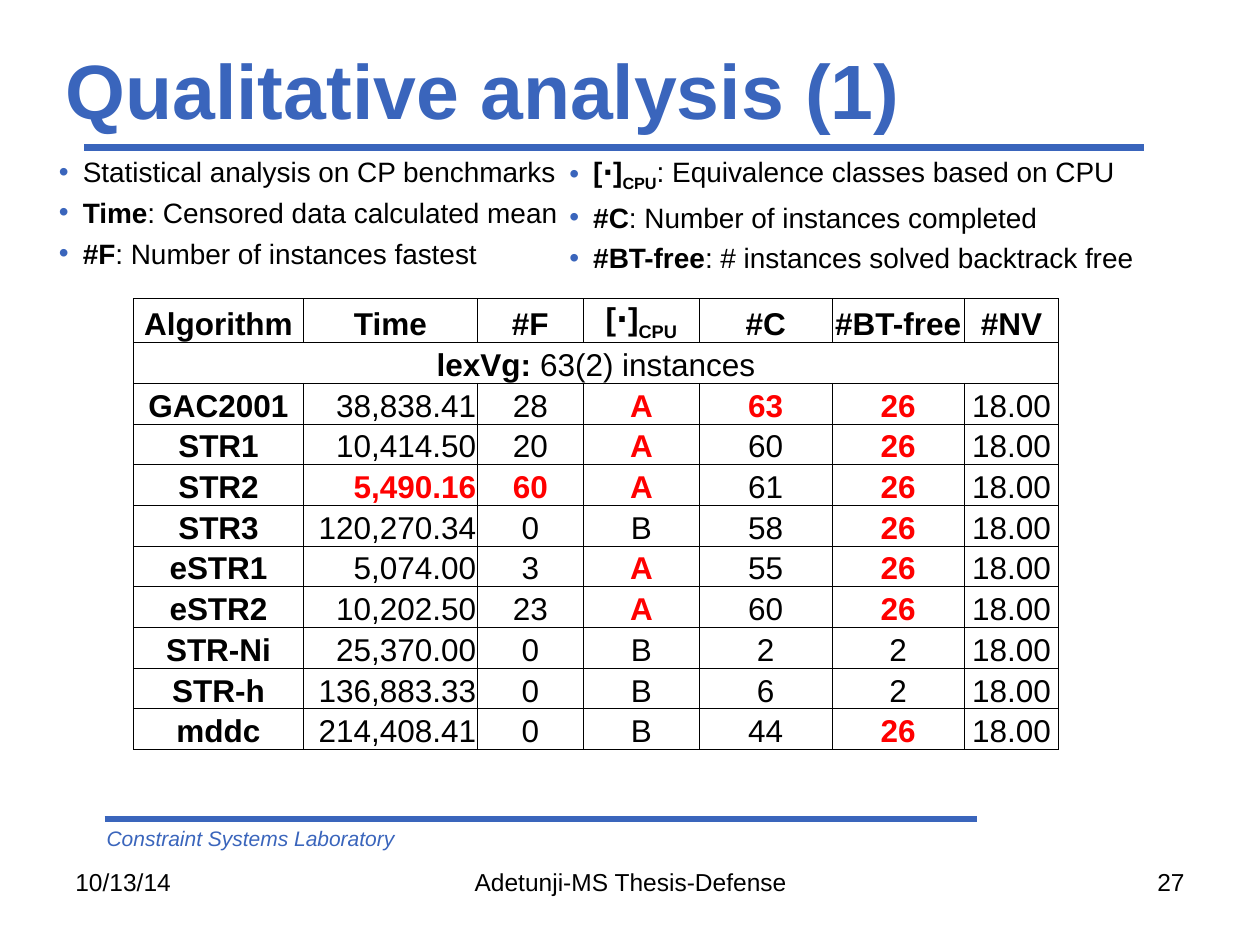
from lxml.etree import SubElement
from pptx import Presentation
from pptx.dml.color import RGBColor
from pptx.enum.shapes import MSO_CONNECTOR
from pptx.enum.text import MSO_ANCHOR as Anchor, PP_ALIGN as Align
from pptx.oxml.ns import qn
from pptx.util import Cm, Pt

BLUE, BLACK, RED = "3A65BC", "000000", "FF0000"


def rgb(value):
    return RGBColor.from_string(value)


def write(paragraph, pieces, size, color=BLACK):
    """Add (text, style) pieces; style letters: b bold, i italic, s subscript."""
    for text, style in pieces:
        run = paragraph.add_run()
        run.text = text
        run.font.name = "Arial"
        run.font.size = Pt(size)
        run.font.color.rgb = rgb(color)
        run.font.bold = "b" in style
        run.font.italic = "i" in style
        if "s" in style:
            run.font._element.set("baseline", "-25000")


deck = Presentation()
deck.slide_width, deck.slide_height = Cm(25.4), Cm(19.05)
slide = deck.slides.add_slide(deck.slide_layouts[5])

# Rules under the title and above the footer
for left, right, y in [(1.7, 23.06, 2.97), (2.11, 19.69, 16.51)]:
    rule = slide.shapes.add_connector(
        MSO_CONNECTOR.STRAIGHT, Cm(left), Cm(y), Cm(right), Cm(y))
    rule.line.color.rgb = rgb(BLUE)
    rule.line.width = Pt(4)
    SubElement(rule._element.spPr, qn("a:effectLst"))

# Title
title = slide.shapes.title
title.left, title.top, title.width, title.height = Cm(1.07), Cm(0.84), Cm(22.86), Cm(1.9)
title.text_frame.vertical_anchor = Anchor.MIDDLE
title.text_frame.paragraphs[0].alignment = Align.LEFT
write(title.text_frame.paragraphs[0], [("Qualitative analysis (1)", "b")], 44, BLUE)

# Laboratory name and footer
footer = [
    ("Constraint Systems Laboratory", 1.9, 16.51, 13.34, 0.76, Align.LEFT, "i", 12, BLUE),
    ("10/13/14", 1.27, 17.35, 5.92, 1.32, Align.LEFT, "", 14, BLACK),
    ("Adetunji-MS Thesis-Defense", 8.69, 17.35, 8.05, 1.32, Align.CENTER, "", 14, BLACK),
    ("27", 18.21, 17.35, 5.92, 1.32, Align.RIGHT, "", 14, BLACK),
]
for text, left, top, width, height, align, style, size, color in footer:
    note = slide.shapes.add_textbox(Cm(left), Cm(top), Cm(width), Cm(height)).text_frame
    note.word_wrap = True
    note.paragraphs[0].alignment = align
    write(note.paragraphs[0], [(text, style)], size, color)

# Results table: a leading * marks the best values
cpu_class = [("[⋅]", "b"), ("CPU", "bs")]
headings = ["Algorithm", "Time", "#F", cpu_class, "#C", "#BT-free", "#NV"]
results = [
    ["GAC2001", "38,838.41", "28", "*A", "*63", "*26", "18.00"],
    ["STR1", "10,414.50", "20", "*A", "60", "*26", "18.00"],
    ["STR2", "*5,490.16", "*60", "*A", "61", "*26", "18.00"],
    ["STR3", "120,270.34", "0", "B", "58", "*26", "18.00"],
    ["eSTR1", "5,074.00", "3", "*A", "55", "*26", "18.00"],
    ["eSTR2", "10,202.50", "23", "*A", "60", "*26", "18.00"],
    ["STR-Ni", "25,370.00", "0", "B", "2", "2", "18.00"],
    ["STR-h", "136,883.33", "0", "B", "6", "2", "18.00"],
    ["mddc", "214,408.41", "0", "B", "44", "*26", "18.00"],
]
benchmark = [[("lexVg: ", "b"), ("63(2) instances", "")]] + [""] * 6
rows = [headings, benchmark] + results
column_widths = [3.43, 3.5, 2.14, 2.34, 2.67, 2.67, 1.9]
row_height = 0.82

table = slide.shapes.add_table(
    len(rows), len(headings), Cm(2.69), Cm(6.02),
    Cm(sum(column_widths)), Cm(row_height * len(rows))).table
table.first_row = table.horz_banding = False
for column, width in zip(table.columns, column_widths):
    column.width = Cm(width)
for row in table.rows:
    row.height = Cm(row_height)
table.cell(1, 0).merge(table.cell(1, len(headings) - 1))

for r, values in enumerate(rows):
    for c, value in enumerate(values):
        cell = table.cell(r, c)
        cell.vertical_anchor = Anchor.BOTTOM
        cell.margin_left = cell.margin_right = cell.margin_top = Cm(0.02)
        cell.margin_bottom = 0
        for side in ("a:lnL", "a:lnR", "a:lnT", "a:lnB"):
            border = SubElement(cell._tc.get_or_add_tcPr(), qn(side), w=str(Pt(0.5)))
            SubElement(SubElement(border, qn("a:solidFill")), qn("a:srgbClr"), val=BLACK)
        cell.fill.background()
        if not value:
            continue
        best = value[0] == "*"
        if isinstance(value, str):
            value = [(value.lstrip("*"), "b" if best or r == 0 or c == 0 else "")]
        paragraph = cell.text_frame.paragraphs[0]
        paragraph.alignment = Align.RIGHT if c == 1 and r > 1 else Align.CENTER
        write(paragraph, value, 18, RED if best else BLACK)

# Legend in two bulleted columns
legend = [
    (0.94, 12.4, [
        [("Statistical analysis on CP benchmarks", "")],
        [("Time", "b"), (": Censored data calculated mean", "")],
        [("#F", "b"), (": Number of instances fastest", "")],
    ]),
    (11.23, 14.5, [
        cpu_class + [(": Equivalence classes based on CPU", "")],
        [("#C", "b"), (": Number of instances completed", "")],
        [("#BT-free", "b"), (": # instances solved backtrack free", "")],
    ]),
]
for left, width, entries in legend:
    frame = slide.shapes.add_textbox(Cm(left), Cm(3), Cm(width), Cm(3.02)).text_frame
    frame.word_wrap = True
    for n, entry in enumerate(entries):
        paragraph = frame.add_paragraph() if n else frame.paragraphs[0]
        props = paragraph._p.get_or_add_pPr()
        props.set("marL", str(Cm(0.48)))
        props.set("indent", str(-Cm(0.48)))
        SubElement(SubElement(props, qn("a:buClr")), qn("a:srgbClr"), val=BLUE)
        SubElement(props, qn("a:buFont"), typeface="Arial")
        SubElement(props, qn("a:buChar"), char="•")
        if n:
            paragraph.space_before = Pt(4)
        write(paragraph, entry, 16)

deck.save("out.pptx")
